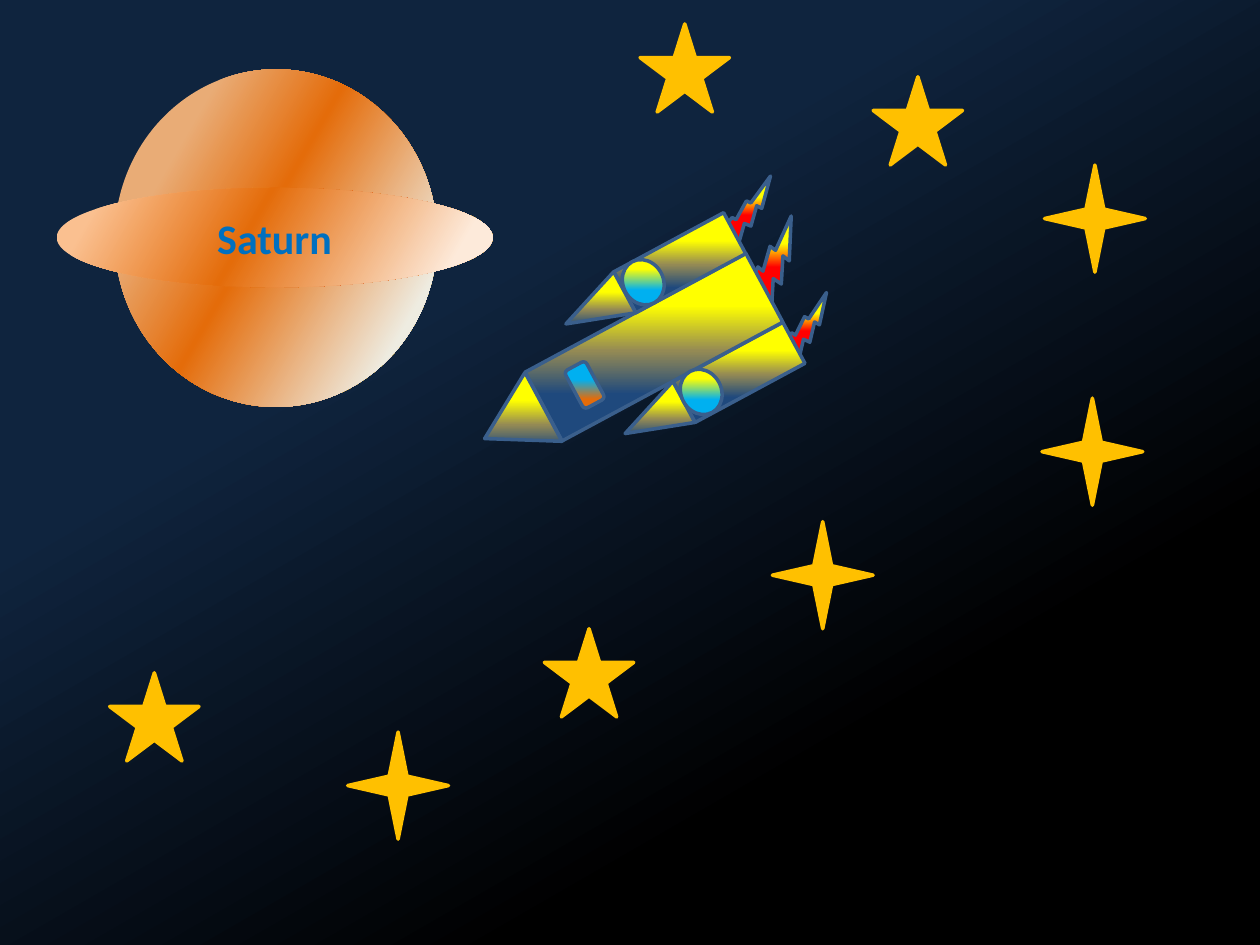
import copy

import pptx
from pptx.dml.color import RGBColor
from pptx.enum.shapes import MSO_SHAPE
from pptx.enum.text import MSO_ANCHOR, PP_ALIGN
from pptx.util import Inches, Pt

COLORS = {
    "night": "0F243E", "black": "000000", "star": "FFC000", "outline": "3A5F8C",
    "sand": "E9AC76", "orange": "E46C0A", "cream": "EEECE1",
    "peach": "FAC090", "blush": "FDEADA", "label": "0070C0",
    "yellow": "FFFF00", "red": "FF0000", "olive": "948A54",
    "navy": "1F497D", "sky": "00B0F0",
}
TILT = 241.7  # heading of the rocket, degrees clockwise


def set_gradient(fill, stops, angle):
    """Fill with (percent, color name) stops; the angle runs clockwise on the page."""
    fill.gradient()
    fill.gradient_angle = 360 - angle
    gradient = fill._fill._gradFill
    gradient.set("rotWithShape", "0")
    while len(gradient.gsLst) < len(stops):
        gradient.gsLst.append(copy.deepcopy(gradient.gsLst[0]))
    for stop, (percent, name) in zip(fill.gradient_stops, stops):
        stop.position = percent / 100
        stop.color.rgb = RGBColor.from_string(COLORS[name])


def add_part(group, kind, place, line=None):
    """Add a shape at (left, top, width, height) with a 2 pt line or none."""
    shape = group.shapes.add_shape(kind, *map(Inches, place))
    shape.shadow.inherit = False
    if line:
        shape.line.color.rgb = RGBColor.from_string(COLORS[line])
        shape.line.width = Pt(2)
    else:
        shape.line.fill.background()
    return shape


deck = pptx.Presentation()
deck.slide_width, deck.slide_height = Inches(10), Inches(7.5)
page = deck.slides.add_slide(deck.slide_layouts[6])

# Night sky
set_gradient(page.background.fill, [(33, "night"), (74, "black")], 60)

# Saturn: globe, then the labelled ring
saturn = page.shapes.add_group_shape()
globe = add_part(saturn, MSO_SHAPE.OVAL, (0.91, 0.55, 2.56, 2.68))
set_gradient(globe.fill, [(21, "sand"), (46, "orange"), (85, "cream")], 30)
ring = add_part(saturn, MSO_SHAPE.OVAL, (0.45, 1.49, 3.46, 0.79))
set_gradient(ring.fill, [(10, "peach"), (44, "orange"), (89, "blush")], 30)
ring.text_frame.vertical_anchor = MSO_ANCHOR.MIDDLE
para = ring.text_frame.paragraphs[0]
para.text = "Saturn"
para.alignment = PP_ALIGN.CENTER
para.font.name, para.font.size, para.font.bold = "Calibri", Pt(24), True
para.font.color.rgb = RGBColor.from_string(COLORS["label"])

# Stars: kind, size, corners
stars = page.shapes.add_group_shape()
star_sets = [
    (MSO_SHAPE.STAR_5_POINT, (0.71, 0.7),
     [(6.93, 0.61), (4.32, 4.99), (0.87, 5.34), (5.08, 0.19)]),
    (MSO_SHAPE.STAR_4_POINT, (0.8, 0.85),
     [(2.76, 5.81), (8.29, 1.31), (6.13, 4.14), (8.27, 3.16)]),
]
for kind, size, corners in star_sets:
    for corner in corners:
        star = add_part(stars, kind, corner + size, "star")
        star.fill.solid()
        star.fill.fore_color.rgb = RGBColor.from_string(COLORS["star"])

# Rocket, from back to front: kind, gradient, places
flame = [(28, "yellow"), (52, "red")]
metal = [(28, "yellow"), (52, "olive"), (75, "navy")]
window = [(39, "sky"), (79, "orange")]
porthole = [(28, "yellow"), (63, "sky")]
rocket_parts = [
    (MSO_SHAPE.LIGHTNING_BOLT, flame,
     [(5.76, 1.4, 0.36, 0.59), (5.87, 1.81, 0.57, 0.59), (6.22, 2.34, 0.37, 0.55)]),
    (MSO_SHAPE.RECTANGLE, metal,
     [(5.68, 2.46, 0.37, 0.99), (4.88, 1.76, 0.62, 1.99), (5.21, 1.59, 0.37, 0.99)]),
    (MSO_SHAPE.ISOSCELES_TRIANGLE, metal,
     [(3.77, 3.09, 0.62, 0.53), (5.01, 3.05, 0.37, 0.53), (4.54, 2.18, 0.37, 0.53)]),
    (MSO_SHAPE.ROUNDED_RECTANGLE, window, [(4.47, 2.96, 0.34, 0.19)]),
    (MSO_SHAPE.OVAL, porthole, [(4.92, 2.08, 0.37, 0.32), (5.38, 2.95, 0.37, 0.32)]),
]
rocket = page.shapes.add_group_shape()
for kind, stops, places in rocket_parts:
    for place in places:
        part = add_part(rocket, kind, place, "outline")
        part.rotation = TILT
        set_gradient(part.fill, stops, 90)

deck.save("out.pptx")
